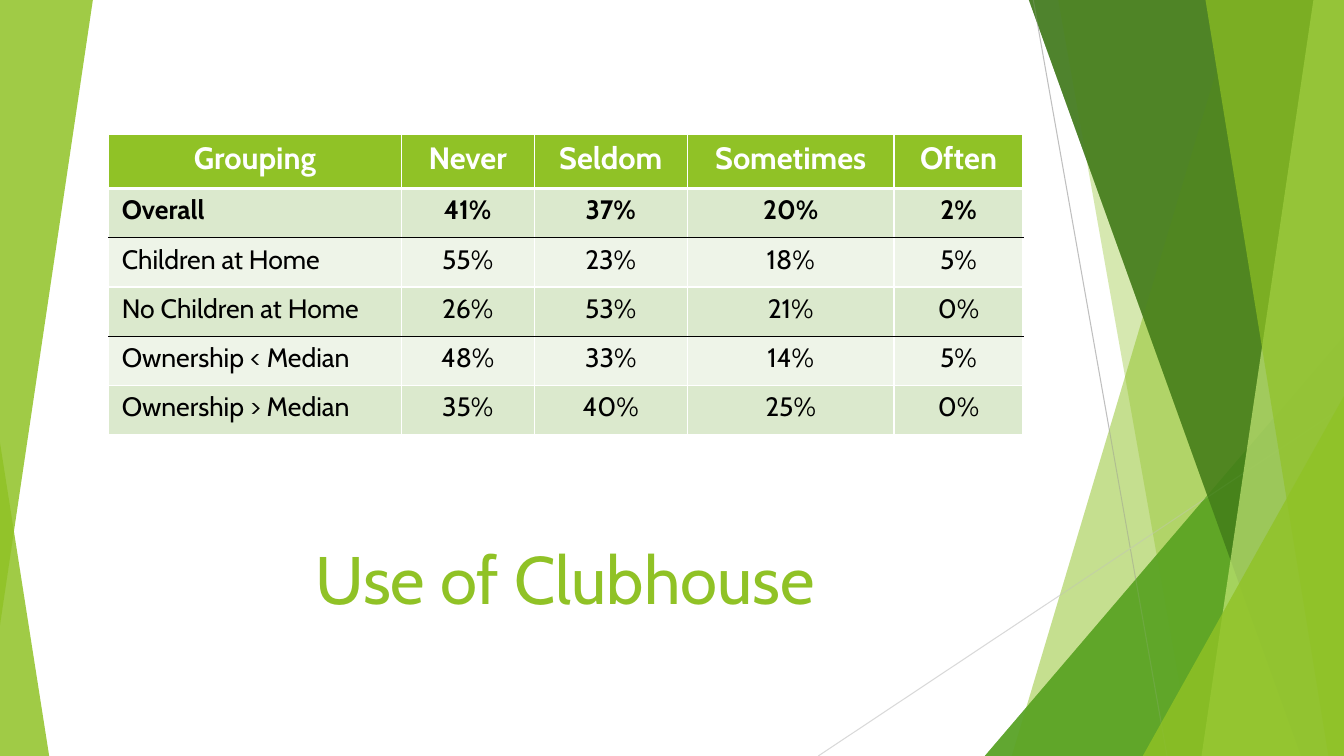
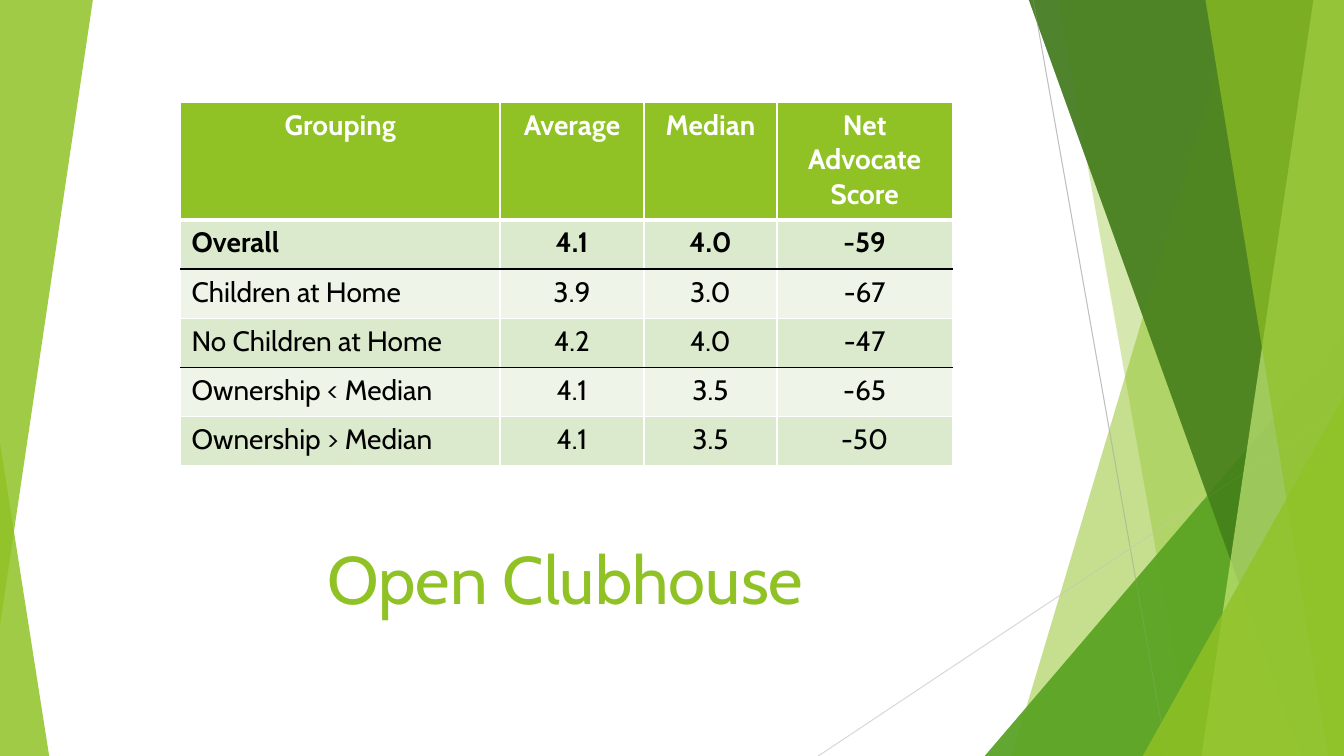
from dataclasses import dataclass

from lxml.etree import SubElement
from pptx import Presentation
from pptx.dml.color import RGBColor
from pptx.enum.shapes import MSO_CONNECTOR, MSO_SHAPE
from pptx.enum.text import MSO_ANCHOR, MSO_AUTO_SIZE, PP_ALIGN
from pptx.oxml.ns import qn
from pptx.shapes.autoshape import Shape
from pptx.shapes.group import GroupShape
from pptx.slide import Slide, SlideLayout
from pptx.table import _Cell
from pptx.text.text import TextFrame
from pptx.util import Cm, Pt

SLIDE_WIDTH, SLIDE_HEIGHT = 33.87, 19.05
ROW_HEIGHT = 1.24


@dataclass(frozen=True)
class Theme:
    font: str = "Cabin"
    lime: str = "90C226"
    green: str = "54A021"
    forest: str = "3F7819"
    pale_lime: str = "C0E474"
    band_dark: str = "DBE9CD"
    band_light: str = "EEF4E8"
    white: str = "FFFFFF"
    black: str = "000000"
    ray_dark: str = "BFBFBF"
    ray_light: str = "D9D9D9"
    title_size: float = 48
    rule: float = 1
    header_rule: float = 3
    ray_width: float = 0.75


THEME = Theme()


@dataclass(frozen=True)
class Shard:
    """Full-height facet whose slanted left edge runs from top_x to bottom_x."""
    top_x: float
    bottom_x: float
    color: str
    opacity: int


@dataclass(frozen=True)
class Corner:
    """Right-angled triangle; apex is 0 for left and 1 for right."""
    left: float
    top: float
    width: float
    height: float
    apex: int
    color: str
    opacity: int
    rotation: int = 0


@dataclass(frozen=True)
class Ray:
    start: tuple[float, float]
    end: tuple[float, float]
    color: str


@dataclass(frozen=True)
class Survey:
    title: str
    left: float
    top: float
    columns: tuple[float, ...]
    header_height: float
    header_size: float
    body_size: float
    side_margin: float
    rows: tuple[tuple[str, ...], ...]


FACETS = (
    Shard(31.19, 25.5, THEME.lime, 30),
    Shard(26.67, 30.05, THEME.lime, 20),
    Corner(24.82, 8.46, 9.05, 10.59, 1, THEME.green, 72),
    Shard(25.93, 32.79, THEME.forest, 70),
    Shard(33.1, 30.28, THEME.pale_lime, 70),
    Shard(30.38, 33.48, THEME.lime, 65),
    Corner(28.8, 9.98, 5.07, 9.07, 1, THEME.lime, 80),
)
LOWER_LEFT = Corner(0, 11.15, 1.24, 7.9, 0, THEME.lime, 85)
UPPER_LEFT = Corner(0, 0, 2.34, 15.75, 1, THEME.lime, 85, rotation=180)
RAYS = (
    Ray((26.04, 0), (29.41, SLIDE_HEIGHT), THEME.ray_dark),
    Ray((SLIDE_WIDTH, 10.24), (20.62, SLIDE_HEIGHT), THEME.ray_light),
)
# The facets are laid twice, which deepens their translucent colours.
BACKDROP = (*FACETS, LOWER_LEFT, *RAYS, *FACETS, UPPER_LEFT)

SURVEYS = (
    Survey(
        "Use of Clubhouse", 2.74, 3.38, (7.37, 3.35, 3.86, 5.21, 3.25),
        header_height=1.37, header_size=22, body_size=19, side_margin=0.33,
        rows=(
            ("Grouping", "Never", "Seldom", "Sometimes", "Often"),
            ("Overall", "41%", "37%", "20%", "2%"),
            ("Children at Home", "55%", "23%", "18%", "5%"),
            ("No Children at Home", "26%", "53%", "21%", "0%"),
            ("Ownership < Median", "48%", "33%", "14%", "5%"),
            ("Ownership > Median", "35%", "40%", "25%", "0%"),
        ),
    ),
    Survey(
        "Open Clubhouse", 4.55, 2.59, (8.05, 3.63, 3.35, 4.42),
        header_height=2.95, header_size=20, body_size=20, side_margin=0.28,
        rows=(
            ("Grouping", "Average", "Median", "Net Advocate Score"),
            ("Overall", "4.1", "4.0", "-59"),
            ("Children at Home", "3.9", "3.0", "-67"),
            ("No Children at Home", "4.2", "4.0", "-47"),
            ("Ownership < Median", "4.1", "3.5", "-65"),
            ("Ownership > Median", "4.1", "3.5", "-50"),
        ),
    ),
)


def write(frame: TextFrame, text: str, *, size: float, color: str,
          bold: bool = False, align: PP_ALIGN = PP_ALIGN.CENTER) -> None:
    frame.text = text
    frame.word_wrap = True
    paragraph = frame.paragraphs[0]
    paragraph.alignment = align
    font = paragraph.runs[0].font
    font.name, font.size, font.bold = THEME.font, Pt(size), bold
    font.color.rgb = RGBColor.from_string(color)


def paint(facet: Shape, color: str, opacity: int) -> None:
    facet.shadow.inherit = False
    facet.line.fill.background()
    facet.fill.solid()
    facet.fill.fore_color.rgb = RGBColor.from_string(color)
    fill_color = facet.element.spPr.find(".//" + qn("a:srgbClr"))
    SubElement(fill_color, qn("a:alpha"), val=str(opacity * 1000))


def add_shard(group: GroupShape, shard: Shard) -> None:
    outline = group.shapes.build_freeform(Cm(shard.top_x), 0)
    outline.add_line_segments([
        (Cm(SLIDE_WIDTH), 0),
        (Cm(SLIDE_WIDTH), Cm(SLIDE_HEIGHT)),
        (Cm(shard.bottom_x), Cm(SLIDE_HEIGHT)),
    ])
    paint(outline.convert_to_shape(), shard.color, shard.opacity)


def add_corner(group: GroupShape, corner: Corner) -> None:
    triangle = group.shapes.add_shape(
        MSO_SHAPE.ISOSCELES_TRIANGLE, Cm(corner.left), Cm(corner.top),
        Cm(corner.width), Cm(corner.height))
    triangle.adjustments[0] = corner.apex
    triangle.rotation = corner.rotation
    paint(triangle, corner.color, corner.opacity)


def add_ray(group: GroupShape, ray: Ray) -> None:
    line = group.shapes.add_connector(
        MSO_CONNECTOR.STRAIGHT, *map(Cm, ray.start), *map(Cm, ray.end))
    line.line.color.rgb = RGBColor.from_string(ray.color)
    line.line.width = Pt(THEME.ray_width)
    SubElement(line.element.spPr, qn("a:effectLst"))


def dress_layout(layout: SlideLayout, workbench: Slide) -> None:
    """Draw the backdrop on a slide, then move it to the layout all slides share."""
    group = workbench.shapes.add_group_shape()
    drawers = {Shard: add_shard, Corner: add_corner, Ray: add_ray}
    for part in BACKDROP:
        drawers[type(part)](group, part)
    for number, properties in enumerate(group.element.iter(qn("p:cNvPr")), 100):
        properties.set("id", str(number))
    layout.shapes.element.insert(2, group.element)

    title = layout.placeholders[0]
    title.left, title.top = Cm(2.74), Cm(12.65)
    title.width, title.height = Cm(23.01), Cm(3.05)


def add_border(cell: _Cell, side: int, color: str, width: float) -> None:
    """Sides are numbered in schema order: left, right, top, bottom."""
    properties = cell._tc.get_or_add_tcPr()
    border = properties.makeelement(
        qn("a:ln" + "LRTB"[side]), {"w": str(Pt(width))})
    fill = SubElement(border, qn("a:solidFill"))
    SubElement(fill, qn("a:srgbClr"), val=color)
    properties.insert(side, border)


def rule_below(row: int) -> tuple[str, float]:
    """Heavy rule under the header, black rules between the groups."""
    if row == 0:
        return THEME.white, THEME.header_rule
    return (THEME.black if row in (1, 3) else THEME.white), THEME.rule


def format_cell(cell: _Cell, survey: Survey, row: int, column: int) -> None:
    is_header = row == 0
    if is_header:
        band = THEME.lime
    else:
        band = THEME.band_dark if row % 2 else THEME.band_light
    cell.fill.solid()
    cell.fill.fore_color.rgb = RGBColor.from_string(band)
    cell.margin_left = cell.margin_right = Cm(survey.side_margin)
    cell.margin_top = cell.margin_bottom = Cm(0.15)
    write(
        cell.text_frame, survey.rows[row][column],
        size=survey.header_size if is_header else survey.body_size,
        color=THEME.white if is_header else THEME.black,
        bold=row <= 1,
        align=PP_ALIGN.CENTER if is_header or column else PP_ALIGN.LEFT,
    )
    plain = (THEME.white, THEME.rule)
    above = plain if is_header else rule_below(row - 1)
    for side, rule in enumerate((plain, plain, above, rule_below(row))):
        add_border(cell, side, *rule)


def add_survey_table(slide: Slide, survey: Survey) -> None:
    heights = [survey.header_height] + [ROW_HEIGHT] * (len(survey.rows) - 1)
    table = slide.shapes.add_table(
        len(heights), len(survey.columns), Cm(survey.left), Cm(survey.top),
        Cm(sum(survey.columns)), Cm(sum(heights))).table
    table.horz_banding = False
    for column, width in enumerate(survey.columns):
        table.columns[column].width = Cm(width)
    for row, height in enumerate(heights):
        table.rows[row].height = Cm(height)
        for column in range(len(survey.columns)):
            format_cell(table.cell(row, column), survey, row, column)


def add_title(slide: Slide, text: str) -> None:
    frame = slide.shapes.title.text_frame
    write(frame, text, size=THEME.title_size, color=THEME.lime)
    frame.auto_size = MSO_AUTO_SIZE.NONE
    frame.vertical_anchor = MSO_ANCHOR.BOTTOM


def main() -> None:
    deck = Presentation()
    deck.slide_width, deck.slide_height = Cm(SLIDE_WIDTH), Cm(SLIDE_HEIGHT)
    title_only = deck.slide_layouts[5]
    slides = [deck.slides.add_slide(title_only) for _ in SURVEYS]
    dress_layout(title_only, slides[0])
    for slide, survey in zip(slides, SURVEYS):
        add_title(slide, survey.title)
        add_survey_table(slide, survey)
    deck.save("out.pptx")


if __name__ == "__main__":
    main()
